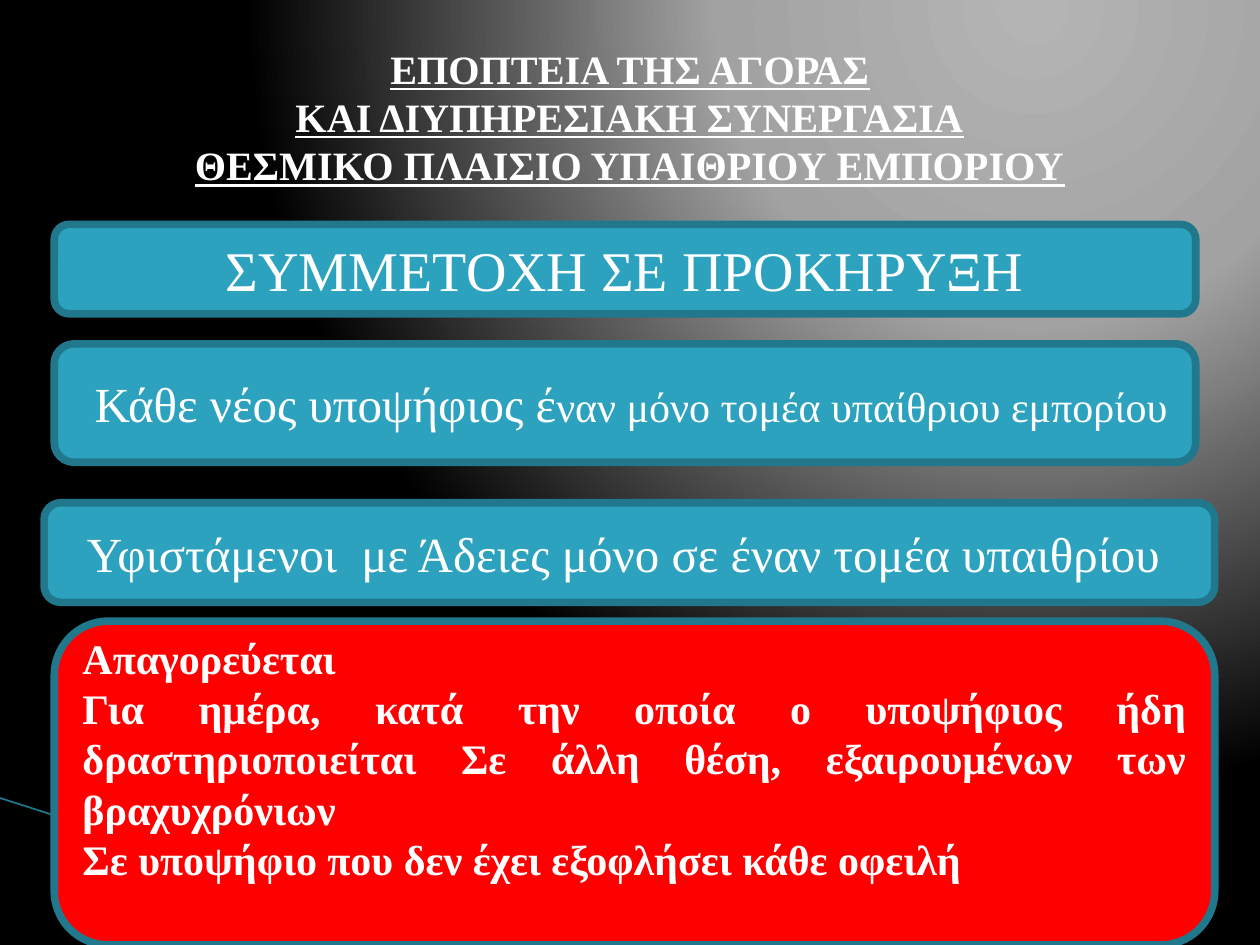
from lxml import etree
from pptx import Presentation
from pptx.dml.color import RGBColor
from pptx.enum import shapes, text
from pptx.oxml import ns
from pptx.util import Pt

WHITE = RGBColor(0xFF, 0xFF, 0xFF)
TEAL = RGBColor(0x2D, 0xA2, 0xBF)
DARK_TEAL = RGBColor(0x21, 0x78, 0x8D)
RED = RGBColor(0xFF, 0x00, 0x00)
GLOW = [(0, RGBColor(0xB4, 0xB4, 0xB4)), (40, RGBColor(0xA2, 0xA2, 0xA2)), (100, RGBColor(0, 0, 0))]


class Deck:
    """Hold the style and the current slide, with a method per kind of element."""

    font = "Times New Roman"
    border = 4.33

    def __init__(self, width, height):
        self.prs = Presentation()
        self.prs.slide_width, self.prs.slide_height = Pt(width), Pt(height)
        self.s = self.prs.slides.add_slide(self.prs.slide_layouts[5])

    def background(self, stops, left, bottom):
        fill = self.s.background.fill
        fill.gradient()
        grad = self.s.element.find(".//" + ns.qn("a:gradFill"))
        for child in list(grad):
            grad.remove(child)
        gs_lst = etree.SubElement(grad, ns.qn("a:gsLst"))
        for pos, color in stops:
            gs = etree.SubElement(gs_lst, ns.qn("a:gs"), pos=str(pos * 1000))
            etree.SubElement(gs, ns.qn("a:srgbClr"), val=str(color))
        circle = etree.SubElement(grad, ns.qn("a:path"), path="circle")
        etree.SubElement(circle, ns.qn("a:fillToRect"), l=str(left * 1000), t="0", r="0", b=str(bottom * 1000))

    def style(self, p, sizes, align, bold=False, underline=None):
        p.alignment = align
        for r, size in zip(p.runs, sizes):
            f = r.font
            f.name, f.size, f.bold, f.underline = self.font, Pt(size), bold, underline
            f.color.rgb = WHITE

    def title(self, words, x, y, w, h, size):
        sp = self.s.shapes.title
        sp.left, sp.top, sp.width, sp.height = Pt(x), Pt(y), Pt(w), Pt(h)
        tf = sp.text_frame
        tf.text = words
        tf.word_wrap = True
        tf.auto_size = text.MSO_AUTO_SIZE.NONE
        tf.vertical_anchor = text.MSO_ANCHOR.MIDDLE
        for p in tf.paragraphs:
            self.style(p, [size], text.PP_ALIGN.CENTER, True, True)

    def line(self, x1, y1, x2, y2, color, width):
        c = self.s.shapes.add_connector(shapes.MSO_CONNECTOR.STRAIGHT, Pt(x1), Pt(y1), Pt(x2), Pt(y2))
        c.line.color.rgb, c.line.width = color, Pt(width)
        etree.SubElement(c.element.spPr, ns.qn("a:effectLst"))

    def box(self, paragraphs, x, y, w, h, fill=TEAL, align=text.PP_ALIGN.CENTER, bold=False, bottom=3.6):
        sp = self.s.shapes.add_shape(shapes.MSO_SHAPE.ROUNDED_RECTANGLE, Pt(x), Pt(y), Pt(w), Pt(h))
        sp.shadow.inherit = False
        sp.fill.solid()
        sp.fill.fore_color.rgb = fill
        sp.line.color.rgb, sp.line.width = DARK_TEAL, Pt(self.border)
        tf = sp.text_frame
        tf.word_wrap = True
        tf.vertical_anchor = text.MSO_ANCHOR.MIDDLE
        tf.margin_bottom = Pt(bottom)
        for i, runs in enumerate(paragraphs):
            p = tf.add_paragraph() if i else tf.paragraphs[0]
            for words, _ in runs:
                p.add_run().text = words
            self.style(p, [size for _, size in runs], align, bold)


def main():
    d = Deck(720, 540)
    d.background(GLOW, 65, 98)
    d.line(-0.7, 455.8, 267.1, 541.4, DARK_TEAL, 0.95)
    d.title(
        "ΕΠΟΠΤΕΙΑ ΤΗΣ ΑΓΟΡΑΣ\nΚΑΙ ΔΙΥΠΗΡΕΣΙΑΚΗ ΣΥΝΕΡΓΑΣΙΑ\nΘΕΣΜΙΚΟ ΠΛΑΙΣΙΟ ΥΠΑΙΘΡΙΟΥ ΕΜΠΟΡΙΟΥ",
        36, 21.6, 648, 90, 23)
    d.box([[(" Κάθε νέος υποψήφιος έ", 28), ("ναν μόνο τομέα υπαίθριου εμπορίου", 24)]], 31, 196.5, 652.3, 67.7)
    d.box([[("ΣΥΜΜΕΤΟΧΗ ΣΕ ΠΡΟΚΗΡΥΞΗ", 32)]], 31, 128.2, 652.3, 51.1)
    d.box([[("Υφιστάμενοι  με Άδειες μόνο σε έναν τομέα υπαιθρίου ", 28)]], 25.2, 287.3, 668.9, 56.9)
    banned = [
        "Απαγορεύεται",
        "Για ημέρα, κατά την οποία ο υποψήφιος ήδη δραστηριοποιείται Σε άλλη θέση, "
        "εξαιρουμένων των βραχυχρόνιων",
        "Σε υποψήφιο που δεν έχει εξοφλήσει κάθε οφειλή",
    ]
    d.box([[(words, 24)] for words in banned], 31, 355, 663.1, 185,
          RED, text.PP_ALIGN.JUSTIFY, True, 32)
    d.prs.save("out.pptx")


if __name__ == "__main__":
    main()
